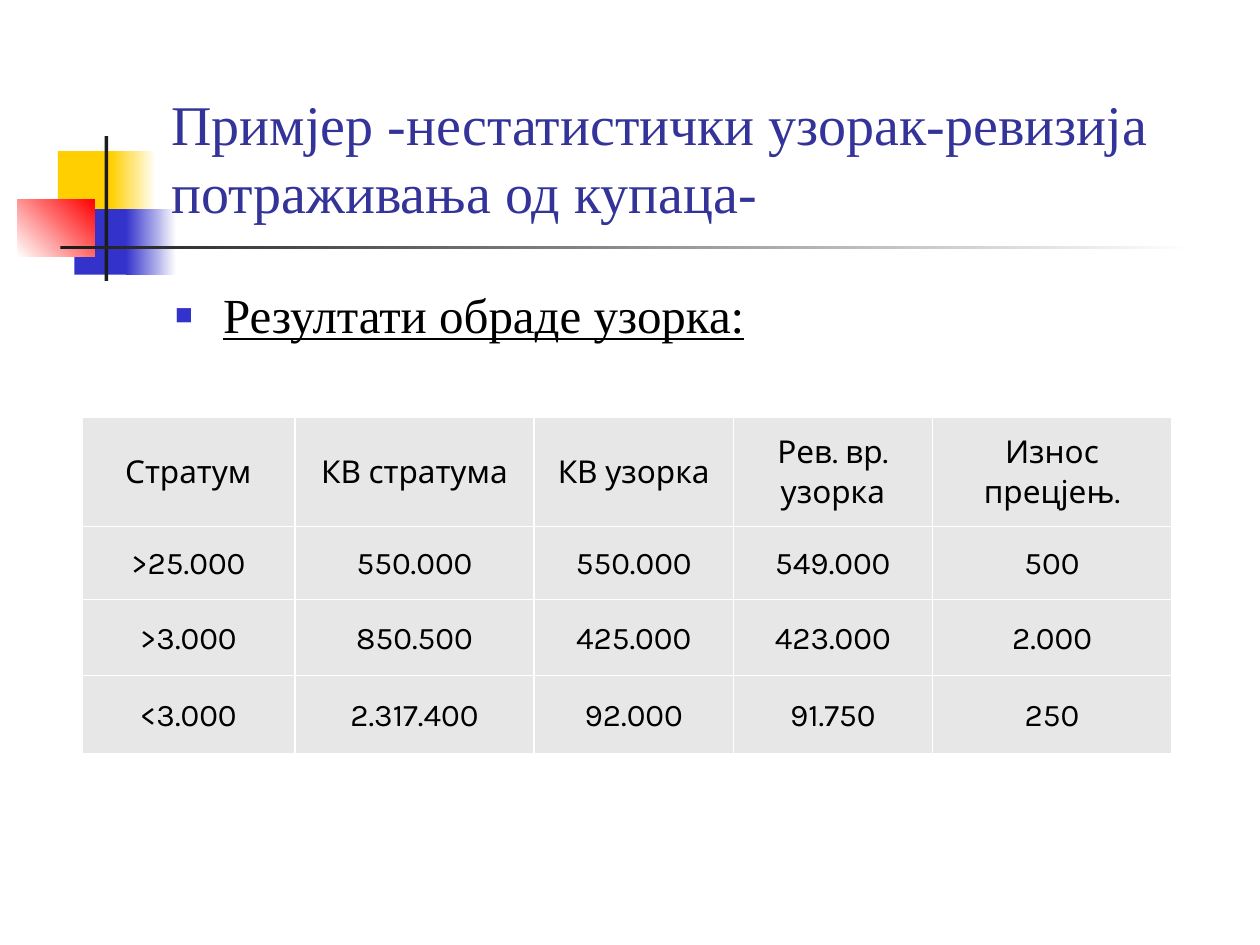
from typing import NamedTuple

from lxml.etree import SubElement
from pptx import Presentation
from pptx.dml.color import RGBColor
from pptx.enum.shapes import MSO_SHAPE
from pptx.enum.text import MSO_ANCHOR, MSO_AUTO_SIZE, PP_ALIGN
from pptx.oxml.ns import qn
from pptx.util import Inches, Pt

SERIF = "Times New Roman"
YELLOW, BLUE, RED, DARK, WHITE = "FFCF01", "3333CC", "FF0000", "1C1C1C", "FFFFFF"


class Block(NamedTuple):
    left: float
    top: float
    width: float
    height: float
    color: str
    end: str = ""  # second gradient colour; empty means a solid fill
    angle: float = 0


BLOCKS = [
    Block(0.46, 1.2, 0.48, 0.52, YELLOW),
    Block(0.88, 1.2, 0.36, 0.52, YELLOW, WHITE),
    Block(0.59, 1.66, 0.46, 0.52, BLUE),
    Block(1, 1.66, 0.4, 0.52, BLUE, WHITE),
    Block(0.14, 1.58, 0.61, 0.46, WHITE, RED, 45),
    Block(0.83, 1.08, 0.03, 1.15, DARK),
    Block(0.48, 1.95, 9, 0.03, DARK, WHITE),
]
COLUMNS = [1.69, 1.9, 1.58, 1.58, 1.9]
ROW_HEIGHTS = [0.87, 0.58, 0.6, 0.62]
ROWS = [
    ["Стратум", "КВ стратума", "КВ узорка", "Рев. вр. узорка", "Износ прецјењ."],
    [">25.000", "550.000", "550.000", "549.000", "500"],
    [">3.000", "850.500", "425.000", "423.000", "2.000"],
    ["<3.000", "2.317.400", "92.000", "91.750", "250"],
]


def rgb(color: str) -> RGBColor:
    return RGBColor.from_string(color)


def write(tf, text: str, *, size: float, font: str, color: str = "000000",
          align=PP_ALIGN.LEFT, underline: bool = False):
    p = tf.paragraphs[0]
    p.alignment = align
    p.space_before = Pt(0)
    r = p.add_run()
    r.text = text
    r.font.size, r.font.name = Pt(size), font
    r.font.color.rgb = rgb(color)
    if underline:
        r.font.underline = True
    return p


def place(sp, left: float, top: float, width: float, height: float) -> None:
    sp.left, sp.top = Inches(left), Inches(top)
    sp.width, sp.height = Inches(width), Inches(height)


def draw_block(s, block: Block):
    sp = s.shapes.add_shape(MSO_SHAPE.RECTANGLE, *map(Inches, block[:4]))
    sp.shadow.inherit = False
    sp.line.fill.background()
    if block.end:
        sp.fill.gradient()
        sp.fill.gradient_angle = block.angle
        for stop, color in zip(sp.fill.gradient_stops, (block.color, block.end)):
            stop.color.rgb = rgb(color)
    else:
        sp.fill.solid()
        sp.fill.fore_color.rgb = rgb(block.color)
    return sp


def add_bullet(p, char: str, color: str, percent: int, indent: float) -> None:
    pPr = p._p.get_or_add_pPr()
    pPr.set("marL", str(Inches(indent)))
    pPr.set("indent", str(-Inches(indent)))
    SubElement(SubElement(pPr, qn("a:buClr")), qn("a:srgbClr"), val=color)
    SubElement(pPr, qn("a:buSzPct"), val=str(percent * 1000))
    SubElement(pPr, qn("a:buChar"), char=char)


def add_borders(cell, color: str, width: float) -> None:
    tcPr = cell._tc.get_or_add_tcPr()
    for side in ("lnL", "lnR", "lnT", "lnB"):
        ln = SubElement(tcPr, qn(f"a:{side}"), w=str(Pt(width)))
        SubElement(SubElement(ln, qn("a:solidFill")), qn("a:srgbClr"), val=color)


def draw_table(s) -> None:
    table = s.shapes.add_table(
        len(ROWS), len(COLUMNS), Inches(0.65), Inches(3.31),
        Inches(sum(COLUMNS)), Inches(sum(ROW_HEIGHTS))).table
    table.first_row = table.horz_banding = False
    for column, width in zip(table.columns, COLUMNS):
        column.width = Inches(width)
    for row, height, texts in zip(table.rows, ROW_HEIGHTS, ROWS):
        row.height = Inches(height)
        for cell, text in zip(row.cells, texts):
            add_borders(cell, WHITE, 1)
            cell.fill.solid()
            cell.fill.fore_color.rgb = rgb("E7E7E7")
            cell.vertical_anchor = MSO_ANCHOR.MIDDLE
            p = write(cell.text_frame, text, size=18, font="Karla",
                      align=PP_ALIGN.CENTER)
            p.line_spacing = 1.07
            p.space_after = Pt(8)


def main() -> None:
    prs = Presentation()
    prs.slide_width, prs.slide_height = Inches(10), Inches(7.5)
    s = prs.slides.add_slide(prs.slide_layouts[1])
    title, body = s.shapes.title, s.placeholders[1]

    for block in BLOCKS:  # the ornament lies behind the title
        title.element.addprevious(draw_block(s, block).element)

    place(title, 1.26, 0.23, 8.52, 1.6)
    title.text_frame.auto_size = MSO_AUTO_SIZE.NONE
    title.text_frame.vertical_anchor = MSO_ANCHOR.BOTTOM
    write(title.text_frame,
          "Примјер -нестатистички узорак-ревизија потраживања од купаца-",
          size=32, font=SERIF, color="333399")

    place(body, 1.29, 2.21, 8.5, 4.5)
    body.text_frame.auto_size = MSO_AUTO_SIZE.NONE
    p = write(body.text_frame, "Резултати обраде узорка:", size=28, font=SERIF,
              underline=True)
    add_bullet(p, "■", BLUE, 60, 0.38)

    draw_table(s)
    prs.save("out.pptx")


if __name__ == "__main__":
    main()
